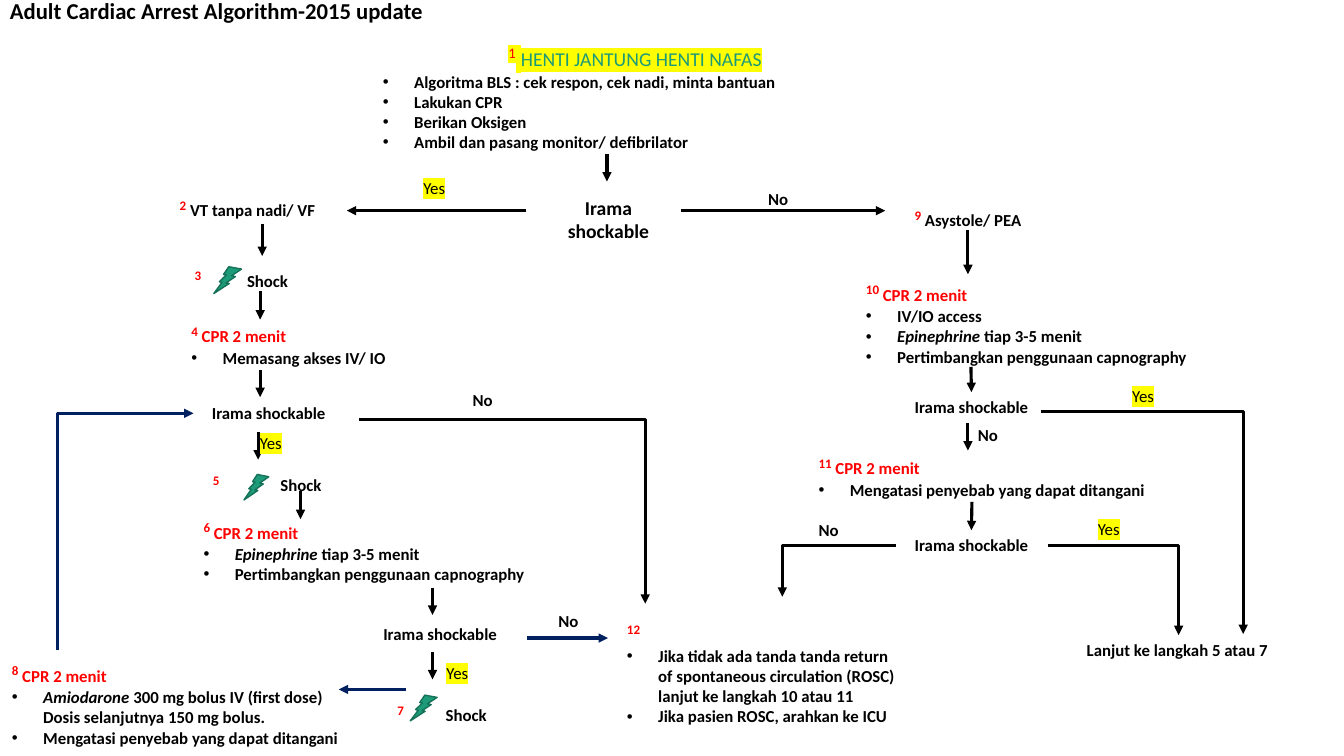
from lxml import etree
from pptx import Presentation
from pptx.dml.color import RGBColor
from pptx.enum.shapes import MSO_CONNECTOR, MSO_SHAPE
from pptx.enum.text import MSO_ANCHOR, PP_ALIGN
from pptx.oxml.ns import qn
from pptx.util import Inches, Pt

BLACK = RGBColor(0x00, 0x00, 0x00)
RED = RGBColor(0xFF, 0x00, 0x00)
GREEN = RGBColor(0x1D, 0x9A, 0x78)
DARK_GREEN = RGBColor(0x15, 0x72, 0x59)
NAVY = RGBColor(0x00, 0x20, 0x60)
YELLOW = "FFFF00"
LEFT, CENTER = PP_ALIGN.LEFT, PP_ALIGN.CENTER
MIDDLE = MSO_ANCHOR.MIDDLE
STRAIGHT, ELBOW = MSO_CONNECTOR.STRAIGHT, MSO_CONNECTOR.ELBOW
BOLT = MSO_SHAPE.LIGHTNING_BOLT
TOP_SIDE = 0

# Run styles: size, colour, marks
STYLES = {
    "title": (16.2, BLACK, ""),
    "first number": (18, RED, "superscript highlight"),
    "first gap": (16, BLACK, "highlight"),
    "heading": (14, GREEN, "highlight"),
    "question": (14, BLACK, ""),
    "number": (16, RED, "superscript"),
    "step": (12, RED, ""),
    "body": (12, BLACK, ""),
    "italic": (12, BLACK, "italic"),
    "yes": (12, BLACK, "highlight"),
    "label end": (18, BLACK, "light"),
}

presentation = Presentation()
presentation.slide_width, presentation.slide_height = Inches(13.33), Inches(7.5)
slide = presentation.slides.add_slide(presentation.slide_layouts[6])


def add_text(left, top, width, height, lines, alignment=LEFT):
    """Each line is (kind, runs); kind is plain, bullet or indent; a run is (text, style)."""
    box = slide.shapes.add_textbox(Inches(left), Inches(top), Inches(width), Inches(height))
    frame = box.text_frame
    frame.word_wrap = True
    for index, (kind, runs) in enumerate(lines):
        paragraph = frame.paragraphs[0] if index == 0 else frame.add_paragraph()
        paragraph.alignment = alignment if kind == "plain" else LEFT
        if kind != "plain":
            properties = paragraph._p.get_or_add_pPr()
            properties.set("marL", str(Inches(0.31)))
        if kind == "bullet":
            properties.set("indent", str(-Inches(0.31)))
            etree.SubElement(properties, qn("a:buFont")).set("typeface", "Arial")
            etree.SubElement(properties, qn("a:buChar")).set("char", "•")
        for text, style in runs:
            size, color, marks = STYLES[style]
            run = paragraph.add_run()
            run.text = text
            run.font.name = "Calibri"
            run.font.size = Pt(size)
            run.font.bold = "light" not in marks
            run.font.italic = "italic" in marks
            run.font.color.rgb = color
            if "superscript" in marks:
                run.font._element.set("baseline", "30000")
            if "highlight" in marks:
                highlight = etree.Element(qn("a:highlight"))
                etree.SubElement(highlight, qn("a:srgbClr")).set("val", YELLOW)
                run.font._element.find(qn("a:solidFill")).addnext(highlight)
    return box


def add_arrow(kind, start, end, color=BLACK, arrowhead="tailEnd"):
    points = [Inches(value) for value in (*start, *end)]
    connector = slide.shapes.add_connector(kind, *points)
    connector.line.color.rgb = color
    connector.line.width = Pt(2.25)
    properties = connector._element.spPr
    etree.SubElement(properties.find(qn("a:ln")), qn(f"a:{arrowhead}")).set("type", "triangle")
    etree.SubElement(properties, qn("a:effectLst"))
    if kind == ELBOW:
        properties.find(qn("a:prstGeom")).set("prst", "bentConnector2")
    return connector


# Title and starting step
title = add_text(0, 0.03, 4.58, 0.18,
                 [("plain", [("Adult Cardiac Arrest Algorithm-2015 update", "title")])])
title.text_frame.vertical_anchor = MIDDLE
title.text_frame.paragraphs[0].line_spacing = 0.9

first_actions = ["Algoritma BLS : cek respon, cek nadi, minta bantuan", "Lakukan CPR",
                 "Berikan Oksigen", "Ambil dan pasang monitor/ defibrilator"]
first_heading = [("1", "first number"), (" ", "first gap"),
                 ("HENTI JANTUNG HENTI NAFAS", "heading")]
add_text(3.7, 0.36, 5.2, 1.48,
         [("plain", first_heading)] + [("bullet", [(action, "body")]) for action in first_actions],
         CENTER)
add_text(5.29, 1.89, 1.49, 0.57, [("plain", [("Irama shockable", "question")])], CENTER)

# Rhythm names
for left, top, width, number, rhythm in [
    (1.45, 1.88, 2.01, "2", "VT tanpa nadi/ VF"),
    (8.94, 1.98, 1.32, "9", "Asystole/ PEA"),
]:
    add_text(left, top, width, 0.3,
             [("plain", [(number, "number"), (" " + rhythm, "body")])], CENTER)

# Shock steps: number, bolt, then the word at a tab stop
for left, top, number, inset, tab, bolt in [
    (1.52, 2.58, "3", 0.41, 0.52, (2.1, 2.65, 0.31, 0.24)),
    (1.77, 4.61, "5", 0.34, 0.67, (2.4, 4.71, 0.28, 0.23)),
    (3.5, 6.89, "7", 0.44, 0.48, (4.05, 6.9, 0.3, 0.23)),
]:
    shock = add_text(left, top, 1.72, 0.34,
                     [("plain", [(number, "number"), ("\tShock", "body")])])
    shock.text_frame.margin_left = Inches(inset)
    tabs = etree.SubElement(shock.text_frame.paragraphs[0]._p.get_or_add_pPr(), qn("a:tabLst"))
    etree.SubElement(tabs, qn("a:tab"), pos=str(Inches(tab)), algn="l")
    shape = slide.shapes.add_shape(BOLT, *[Inches(value) for value in bolt])
    shape.shadow.inherit = False
    shape.rotation = 351
    shape._element.spPr.find(qn("a:xfrm")).set("flipH", "1")
    shape.fill.solid()
    shape.fill.fore_color.rgb = GREEN
    shape.line.color.rgb = DARK_GREEN
    shape.line.width = Pt(1)

# CPR steps
epinephrine = ("bullet", [("Epinephrine ", "italic"), ("tiap 3-5 menit", "body")])
capnography = ("bullet", [("Pertimbangkan penggunaan capnography", "body")])
causes = ("bullet", [("Mengatasi penyebab yang dapat ditangani", "body")])
amiodarone = ("bullet", [("Amiodarone ", "italic"), ("300 mg bolus IV (first dose)", "body")])
next_dose = ("indent", [("Dosis selanjutnya 150 mg bolus.", "body")])
for left, top, width, height, number, actions in [
    (1.8, 3.13, 2.47, 0.54, "4", [("bullet", [("Memasang akses IV/ IO", "body")])]),
    (1.92, 5.08, 3.41, 0.71, "6", [epinephrine, capnography]),
    (0.02, 6.5, 3.9, 0.91, "8", [amiodarone, next_dose, causes]),
    (8.49, 2.72, 3.41, 0.91, "10",
     [("bullet", [("IV/IO access", "body")]), epinephrine, capnography]),
    (8.02, 4.44, 3.9, 0.5, "11", [causes]),
]:
    heading = ("plain", [(number, "number"), (" CPR 2 menit", "step")])
    add_text(left, top, width, height, [heading] + actions)

# Final steps
add_text(6.12, 6.09, 2.91, 1.09, [
    ("plain", [("12", "number")]),
    ("bullet", [("Jika tidak ada tanda tanda return of spontaneous circulation (ROSC) "
                 "lanjut ke langkah 10 atau 11", "body")]),
    ("bullet", [("Jika pasien ROSC, arahkan ke ICU", "body")]),
])
add_text(10.68, 6.3, 2.03, 0.3, [("plain", [("Lanjut ke langkah 5 atau 7", "body")])])

# Rhythm checks
rhythm_checks = [
    add_text(left, top, 1.49, 0.3, [("plain", [("Irama shockable", "body")])], CENTER)
    for left, top in [(1.92, 3.95), (3.62, 6.14), (8.89, 3.89), (8.89, 5.26)]
]

# Short downward arrows
for x, top, bottom in [
    (6.02, 1.53, 1.8), (9.6, 2.28, 2.72), (9.6, 4.2, 4.47), (2.6, 2.22, 2.54),
    (2.58, 2.89, 3.17), (2.58, 3.67, 3.94), (2.56, 4.29, 4.56), (2.98, 4.87, 5.15),
    (4.29, 5.83, 6.1), (4.29, 6.47, 6.74),
]:
    add_arrow(STRAIGHT, (x, top), (x, bottom))
for x, top, check in [(9.63, 3.64, rhythm_checks[2]), (9.64, 4.98, rhythm_checks[3])]:
    add_arrow(STRAIGHT, (x, top), (x, top + 0.27)).end_connect(check, TOP_SIDE)

# Horizontal arrows
for start, end, y, color in [
    (5.22, 3.44, 2.09, BLACK), (6.75, 8.78, 2.09, BLACK),
    (4.03, 3.36, 6.84, NAVY), (5.23, 6.03, 6.33, NAVY),
]:
    add_arrow(STRAIGHT, (start, y), (end, y), color)

# Bent arrows run sideways first, then down
for start, end in [
    ((8.89, 5.41), (7.76, 5.92)), ((10.39, 5.41), (11.69, 6.3)),
    ((10.33, 4.08), (12.33, 6.29)), ((3.56, 4.16), (6.4, 5.99)),
]:
    add_arrow(ELBOW, start, end)
add_arrow(ELBOW, (1.92, 4.1), (0.57, 6.45), NAVY, "headEnd")

# Yes and No labels
for answer, style, places in [
    ("Yes", "yes", [(4.1, 1.63), (10.79, 5.01), (11.13, 3.69), (2.48, 4.16), (4.33, 6.44)]),
    ("No", "body", [(7.52, 1.74), (9.6, 4.08), (8.02, 5.02), (4.59, 3.73), (5.44, 5.93)]),
]:
    for left, top in places:
        add_text(left, top, 0.46, 0.4, [("plain", [(answer, style), (" ", "label end")])])

presentation.save("out.pptx")
